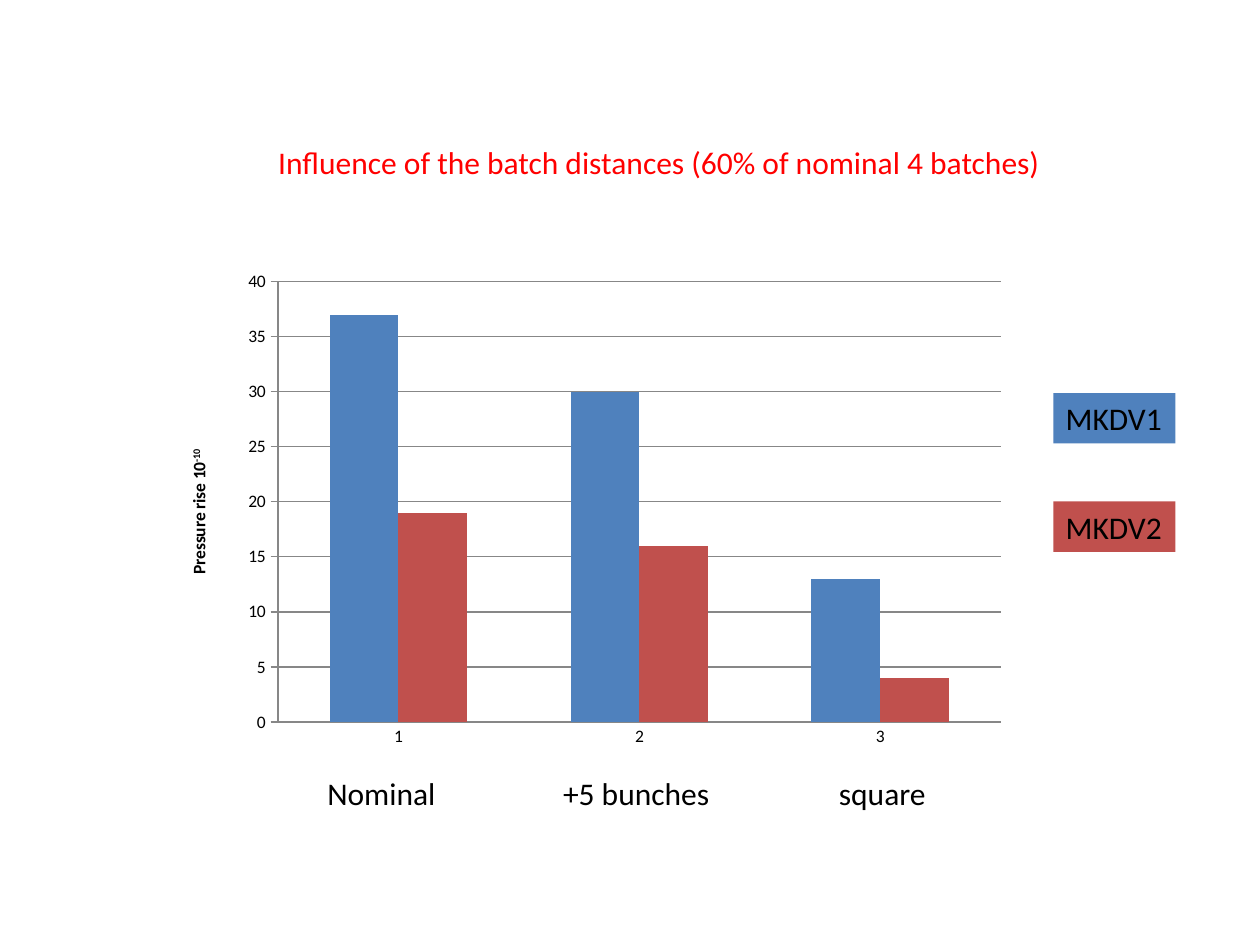
import pptx
import pptx.chart.data
import pptx.dml.color
import pptx.enum.chart
import pptx.enum.shapes
import pptx.enum.text
import pptx.oxml
import pptx.oxml.ns
import pptx.util

RGB = pptx.dml.color.RGBColor
BLUE = RGB(0x4F, 0x81, 0xBD)
BRICK = RGB(0xC0, 0x50, 0x4D)
RED = RGB(0xFF, 0x00, 0x00)
BLACK = RGB(0x00, 0x00, 0x00)
GREY = RGB(0x87, 0x87, 0x87)
WIDE, HIGH = pptx.util.Inches(10), pptx.util.Inches(7.5)
ROW = 0.4 / 7.5
TICK = pptx.enum.chart.XL_TICK_MARK
SERIES = {"MKDV1": ((37, 30, 13), BLUE), "MKDV2": ((19, 16, 4), BRICK)}
NAMES = (("Nominal", 0.25, 0.107), ("+5 bunches", 0.437, 0.138), ("square", 0.656, 0.09))


def apply(item, form):
    """Set each attribute of an item from a dict of format values."""
    for name, value in form.items():
        setattr(item, name, value)


def scale(box):
    """Turn shares of the slide into lengths."""
    return [round(part * side) for part, side in zip(box, (WIDE, HIGH) * 2)]


def style(font, size, color=BLACK, bold=False):
    """Give a font its face, size, weight and colour."""
    apply(font, {"name": "Calibri", "size": pptx.util.Pt(size), "bold": bold})
    font.color.rgb = color


def label(slide, text, box, color=BLACK, fill=None):
    """Place a line of text in a box, with a fill if one is given."""
    if fill is None:
        shape = slide.shapes.add_textbox(*scale(box))
    else:
        kind = pptx.enum.shapes.MSO_SHAPE.RECTANGLE
        shape = slide.shapes.add_shape(kind, *scale(box))
        shape.shadow.inherit = False
        shape.fill.solid()
        shape.fill.fore_color.rgb = fill
        shape.line.fill.background()
    frame = shape.text_frame
    apply(frame, {
        "text": text,
        "word_wrap": False,
        "auto_size": pptx.enum.text.MSO_AUTO_SIZE.SHAPE_TO_FIT_TEXT,
        "vertical_anchor": pptx.enum.text.MSO_ANCHOR.TOP,
    })
    frame.paragraphs[0].alignment = pptx.enum.text.PP_ALIGN.LEFT
    style(frame.paragraphs[0].runs[0].font, 18, color)


def layout(inner, **share):
    """Build a manual chart layout from shares of the chart."""
    tags = '<c:layoutTarget val="inner"/>' if inner else ""
    tags += "".join(f'<c:{key}Mode val="edge"/>' for key in "xy")
    tags += "".join(f'<c:{key} val="{value}"/>' for key, value in share.items())
    space = pptx.oxml.ns.nsdecls("c")
    return pptx.oxml.parse_xml(
        f"<c:layout {space}><c:manualLayout>{tags}</c:manualLayout></c:layout>")


def heading(axis):
    """Write the value axis title with its raised exponent."""
    title = axis.axis_title
    para = title.text_frame.paragraphs[0]
    for text, lift in (("Pressure rise 10", 0), ("-10", 30000)):
        run = para.add_run()
        run.text = text
        style(run.font, 10, bold=True)
        run.font._element.set("baseline", str(lift))
    node = title._element
    for old in node.findall(pptx.oxml.ns.qn("c:layout")):
        node.remove(old)
    node.find(pptx.oxml.ns.qn("c:tx")).addnext(layout(False, x=0.03, y=0.37))


def graph(slide, box):
    """Draw the clustered columns in a box."""
    data = pptx.chart.data.CategoryChartData()
    data.categories = ["1", "2", "3"]
    for name, (values, _) in SERIES.items():
        data.add_series(name, values)
    kind = pptx.enum.chart.XL_CHART_TYPE.COLUMN_CLUSTERED
    chart = slide.shapes.add_chart(kind, *scale(box), data).chart
    apply(chart, {"has_legend": False, "has_title": False})
    style(chart.font, 10)
    plot = chart.plots[0]
    apply(plot, {"gap_width": 150, "overlap": 0, "vary_by_categories": False})
    for bars, (_, color) in zip(plot.series, SERIES.values()):
        bars.format.fill.solid()
        bars.format.fill.fore_color.rgb = color
    area = chart._chartSpace.chart.plotArea
    for old in area.findall(pptx.oxml.ns.qn("c:layout")):
        area.remove(old)
    area.insert(0, layout(True, x=0.14, y=0.04, w=0.84, h=0.89))
    apply(chart.category_axis, {"major_tick_mark": TICK.NONE})
    axis = chart.value_axis
    apply(axis, {
        "minimum_scale": 0, "maximum_scale": 40, "major_unit": 5,
        "major_tick_mark": TICK.CROSS, "has_major_gridlines": True,
    })
    for part in (chart.category_axis, axis, axis.major_gridlines):
        part.format.line.color.rgb = GREY
        part.format.line.width = pptx.util.Pt(0.75)
    heading(axis)


def legend(slide, box):
    """Stack the series names in a box, one on each filled tile."""
    left, top, wide, high = box
    step = (high - ROW) / (len(SERIES) - 1)
    for row, (name, (_, color)) in enumerate(SERIES.items()):
        label(slide, name, (left, top + row * step, wide, ROW), fill=color)


def names(slide, top):
    """Write the batch names in a row under the columns."""
    for text, left, wide in NAMES:
        label(slide, text, (left, top, wide, ROW))


def main():
    """Build the slide and save it."""
    deck = pptx.Presentation()
    apply(deck, {"slide_width": WIDE, "slide_height": HIGH})
    slide = deck.slides.add_slide(deck.slide_layouts[6])
    graph(slide, (0.125, 0.277, 0.683, 0.524))
    title = "Influence of the batch distances (60% of nominal 4 batches)"
    label(slide, title, (0.211, 0.145, 0.632, ROW), RED)
    names(slide, 0.812)
    legend(slide, (0.836, 0.416, 0.097, 0.168))
    deck.save("out.pptx")


if __name__ == "__main__":
    main()
